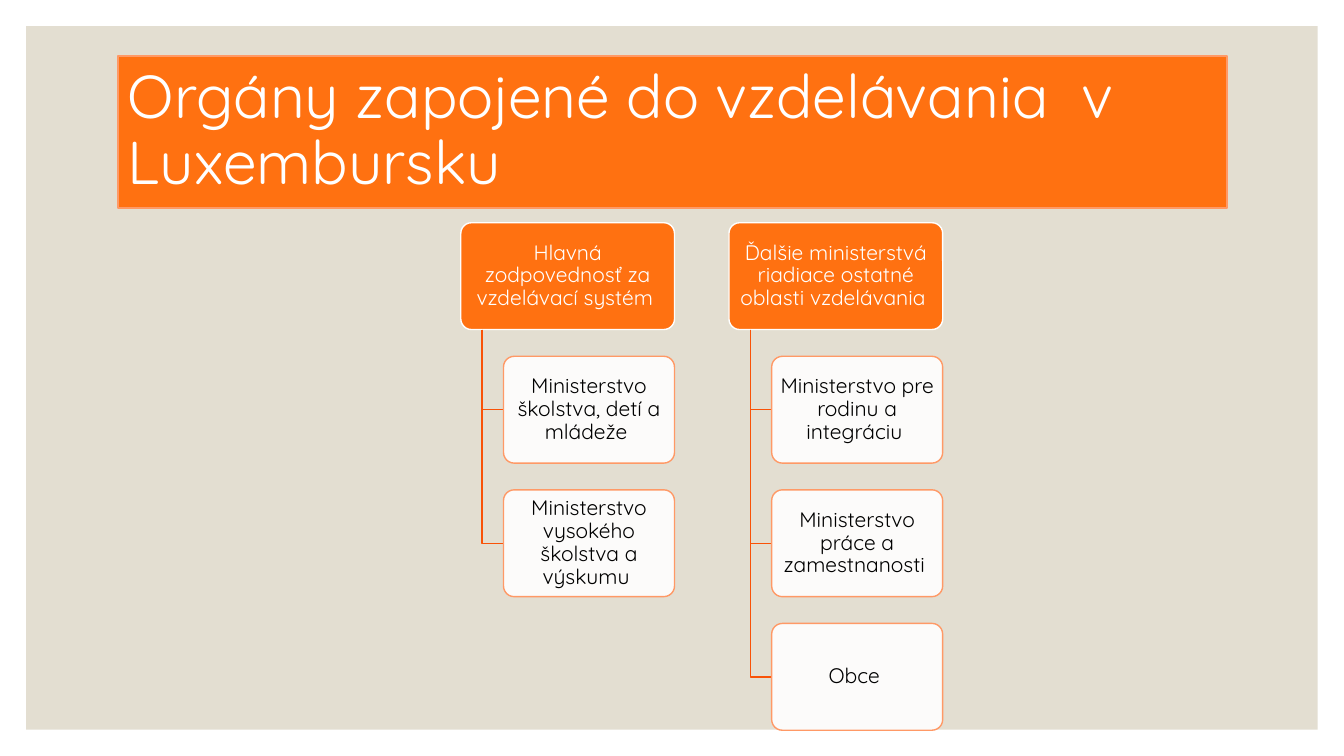
from lxml.etree import SubElement
from pptx import Presentation
from pptx.dml.color import RGBColor
from pptx.enum.shapes import MSO_SHAPE
from pptx.enum.text import MSO_ANCHOR, PP_ALIGN
from pptx.oxml.ns import qn
from pptx.util import Inches, Pt

COLORS = {
    "page": "FFFFFF",
    "panel": "E3DED1",
    "accent": "FF7111",
    "border": "FF9966",
    "branch": "F95207",
    "light": "FFFFFF",
    "dark": "000000",
}
SLIDE_WIDTH, SLIDE_HEIGHT = 13.33, 7.5
BOX_WIDTH, BOX_HEIGHT = 2.12, 1.06
COLUMN_STEP, ROW_STEP = 1.25 * BOX_WIDTH + 0.01, 1.25 * BOX_HEIGHT
STEM_INDENT, CHILD_INDENT = 0.1 * BOX_WIDTH, 0.2 * BOX_WIDTH

TITLE = "Orgány zapojené do vzdelávania  v Luxembursku"
AUTHORITIES = [
    ("Hlavná zodpovednosť za vzdelávací systém ", [
        "Ministerstvo školstva, detí a mládeže ",
        "Ministerstvo vysokého školstva a výskumu ",
    ]),
    ("Ďalšie ministerstvá riadiace ostatné oblasti vzdelávania ", [
        "Ministerstvo pre rodinu a integráciu ",
        "Ministerstvo práce a zamestnanosti ",
        "Obce ",
    ]),
]

TITLE_STYLE = {
    "frame": {"word_wrap": True, "vertical_anchor": MSO_ANCHOR.MIDDLE},
    "paragraph": {"alignment": PP_ALIGN.LEFT, "line_spacing": 0.9},
    "font": {"name": "Quicksand", "size": Pt(43.2)},
}
BOX_STYLE = {
    "frame": {
        "word_wrap": True,
        "vertical_anchor": MSO_ANCHOR.MIDDLE,
        "margin_left": Inches(0.03),
        "margin_right": Inches(0.03),
        "margin_top": Inches(0.02),
        "margin_bottom": Inches(0.02),
    },
    "paragraph": {"alignment": PP_ALIGN.CENTER, "line_spacing": 0.9},
    "font": {"name": "Quicksand", "size": Pt(15)},
}


def rgb(role):
    return RGBColor.from_string(COLORS[role])


def apply(target, values):
    for attribute, value in values.items():
        setattr(target, attribute, value)


def outline(shape, role, width):
    shape.shadow.inherit = False
    shape.line.color.rgb = rgb(role)
    shape.line.width = Pt(width)


def add_area(slide, preset, box, fill):
    area = slide.shapes.add_shape(preset, *map(Inches, box))
    area.shadow.inherit = False
    area.fill.solid()
    area.fill.fore_color.rgb = rgb(fill)
    return area


def write(shape, wording, style, color):
    frame = shape.text_frame
    paragraph = frame.paragraphs[0]
    run = paragraph.add_run()
    run.text = wording
    apply(frame, style["frame"])
    apply(paragraph, style["paragraph"])
    apply(run.font, style["font"])
    run.font.color.rgb = rgb(color)


def add_panel(slide, box):
    panel = add_area(slide, MSO_SHAPE.RECTANGLE, box, "panel")
    panel.line.fill.background()


def add_title(slide, box):
    banner = add_area(slide, MSO_SHAPE.RECTANGLE, box, "accent")
    outline(banner, "border", 1.5)
    write(banner, TITLE, TITLE_STYLE, "light")


def add_authority(slide, box, wording, fill, border, color):
    authority = add_area(slide, MSO_SHAPE.ROUNDED_RECTANGLE, box, fill)
    authority.adjustments[0] = 0.1
    outline(authority, border, 1)
    write(authority, wording, BOX_STYLE, color)
    return authority


def make_translucent(shape, percent):
    tint = shape.fill._xPr.find(qn("a:solidFill"))[0]
    SubElement(tint, qn("a:alpha")).set("val", str(percent * 1000))


def add_branch(slide, left, top, right, bottom):
    builder = slide.shapes.build_freeform(Inches(left), Inches(top))
    builder.add_line_segments(
        [(Inches(left), Inches(bottom)), (Inches(right), Inches(bottom))],
        close=False,
    )
    branch = builder.convert_to_shape()
    branch.fill.background()
    outline(branch, "branch", 1)


def add_hierarchy(slide, left, top, heading, members):
    add_authority(slide, (left, top, BOX_WIDTH, BOX_HEIGHT), heading,
                  "accent", "light", "light")
    member_left = left + CHILD_INDENT
    for row, member in enumerate(members, start=1):
        member_top = top + row * ROW_STEP
        add_branch(slide, left + STEM_INDENT, top + BOX_HEIGHT,
                   member_left, member_top + BOX_HEIGHT / 2)
        member_box = (member_left, member_top,
                      BOX_WIDTH - CHILD_INDENT, BOX_HEIGHT)
        authority = add_authority(slide, member_box, member,
                                  "light", "border", "dark")
        make_translucent(authority, 90)


def main():
    presentation = Presentation()
    apply(presentation, {"slide_width": Inches(SLIDE_WIDTH),
                         "slide_height": Inches(SLIDE_HEIGHT)})
    slide = presentation.slides.add_slide(presentation.slide_layouts[6])
    slide.background.fill.solid()
    slide.background.fill.fore_color.rgb = rgb("page")
    margin = 0.26
    add_panel(slide, (margin, margin, SLIDE_WIDTH - 2 * margin,
                      SLIDE_HEIGHT - 2 * margin))
    add_title(slide, (1.17, 0.56, 11, 1.5))
    for column, (heading, members) in enumerate(AUTHORITIES):
        add_hierarchy(slide, 4.57 + column * COLUMN_STEP, 2.21,
                      heading, members)
    presentation.save("out.pptx")


if __name__ == "__main__":
    main()
